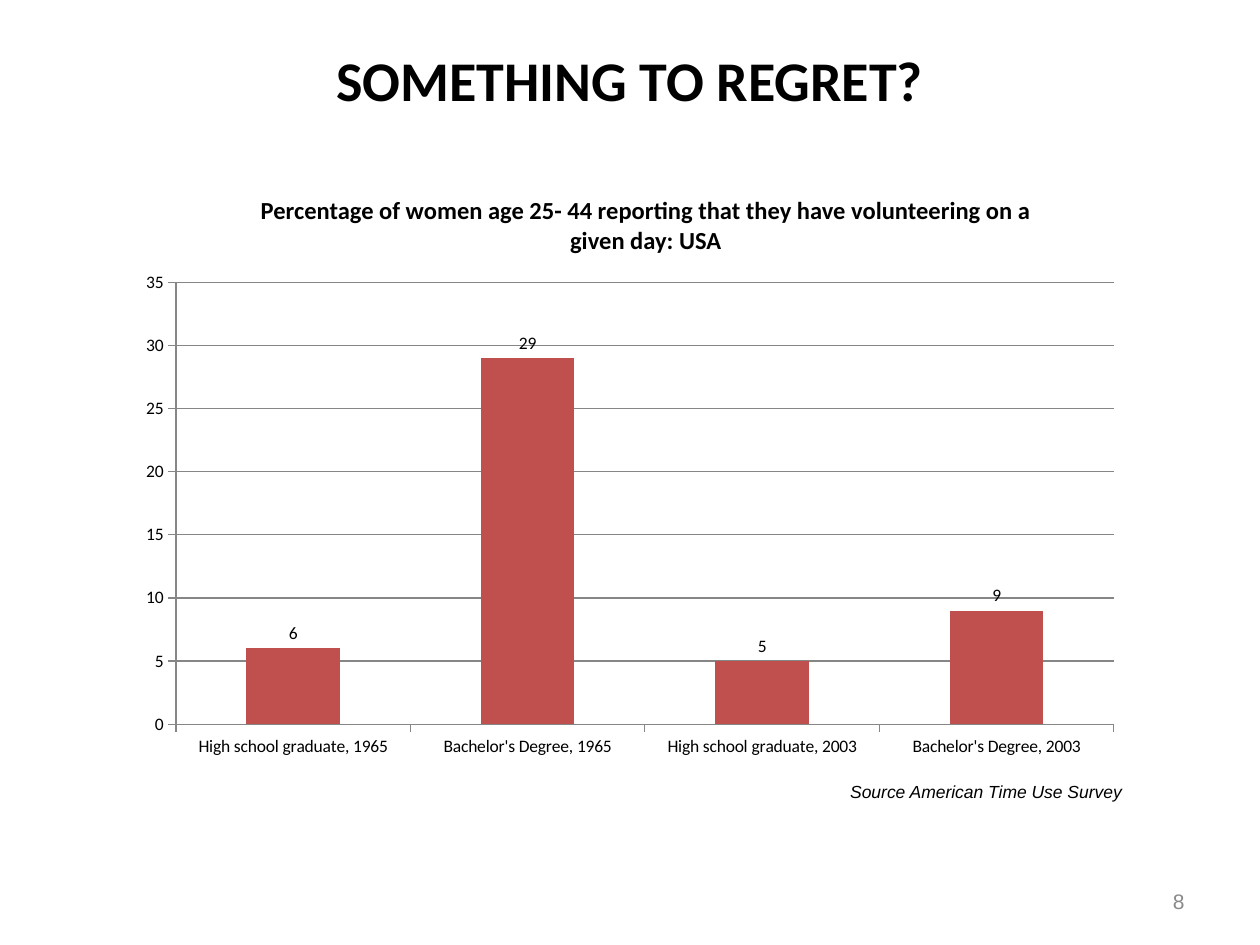
"""Build the slide on volunteering among women in the USA."""
from dataclasses import dataclass

from pptx import Presentation
from pptx import util as u
from pptx.chart.data import CategoryChartData
from pptx.dml.color import RGBColor
from pptx.enum import chart as charts, text

BLACK = RGBColor(0x00, 0x00, 0x00)
GREY = RGBColor(0x89, 0x89, 0x89)
AXIS_GREY = RGBColor(0x86, 0x86, 0x86)
RED = RGBColor(0xC0, 0x50, 0x4D)

VOLUNTEERING = {
    "High school graduate, 1965": 6,
    "Bachelor's Degree, 1965": 29,
    "High school graduate, 2003": 5,
    "Bachelor's Degree, 2003": 9,
}


@dataclass(frozen=True)
class Label:
    words: str
    left: float
    top: float
    width: float
    height: float
    size: float
    font: str
    align: text.PP_ALIGN
    anchor: text.MSO_ANCHOR = text.MSO_ANCHOR.TOP
    color: RGBColor = BLACK
    bold: bool = False
    italic: bool = False


LABELS = (
    Label("8", 516, 500.5, 168, 28.75, 12, "Arial", text.PP_ALIGN.RIGHT,
          text.MSO_ANCHOR.MIDDLE, GREY),
    Label("SOMETHING TO REGRET?", 0, 0, 720, 90, 32, "Calibri",
          text.PP_ALIGN.CENTER, text.MSO_ANCHOR.MIDDLE, bold=True),
    Label("Source American Time Use Survey", 354, 442.5, 294, 19.5, 10,
          "Arial", text.PP_ALIGN.RIGHT, italic=True),
    Label("Percentage of women age 25- 44 reporting that they have "
          "volunteering on a given day: USA", 132, 108, 474, 41, 14,
          "Calibri", text.PP_ALIGN.CENTER, bold=True),
)


def add_label(slide, label: Label) -> None:
    """Draw one text box."""
    box = slide.shapes.add_textbox(u.Pt(label.left), u.Pt(label.top),
                                   u.Pt(label.width), u.Pt(label.height))
    frame = box.text_frame
    frame.word_wrap = True
    frame.vertical_anchor = label.anchor
    para = frame.paragraphs[0]
    para.text = label.words
    para.alignment = label.align
    font = para.font
    font.name, font.size = label.font, u.Pt(label.size)
    font.bold, font.italic = label.bold, label.italic
    font.color.rgb = label.color


def style_line(line) -> None:
    """Give an axis or gridline its thin grey stroke."""
    line.color.rgb = AXIS_GREY
    line.width = u.Pt(0.75)


def add_volunteering_chart(slide) -> None:
    """Draw the column chart of volunteering rates."""
    data = CategoryChartData(number_format="General")
    data.categories = list(VOLUNTEERING)
    data.add_series("Series 1", list(VOLUNTEERING.values()))
    chart = slide.shapes.add_chart(
        charts.XL_CHART_TYPE.COLUMN_CLUSTERED,
        u.Pt(72), u.Pt(150), u.Pt(576), u.Pt(288), data).chart
    chart.has_legend = False
    chart.has_title = False
    chart.font.name, chart.font.size = "Calibri", u.Pt(10)
    chart.font.color.rgb = BLACK

    for axis in (chart.category_axis, chart.value_axis):
        axis.major_tick_mark = charts.XL_TICK_MARK.OUTSIDE
        axis.minor_tick_mark = charts.XL_TICK_MARK.NONE
        style_line(axis.format.line)
    scale = chart.value_axis
    scale.minimum_scale, scale.maximum_scale, scale.major_unit = 0, 35, 5
    scale.has_major_gridlines = True
    style_line(scale.major_gridlines.format.line)

    plot = chart.plots[0]
    plot.gap_width = 150
    plot.vary_by_categories = False
    plot.has_data_labels = True
    plot.data_labels.show_value = True
    plot.data_labels.position = charts.XL_LABEL_POSITION.OUTSIDE_END
    fill = plot.series[0].format.fill
    fill.solid()
    fill.fore_color.rgb = RED


def main() -> None:
    """Build and save the deck."""
    deck = Presentation()
    deck.slide_width, deck.slide_height = u.Pt(720), u.Pt(540)
    slide = deck.slides.add_slide(deck.slide_layouts[6])
    add_volunteering_chart(slide)
    for label in LABELS:
        add_label(slide, label)
    deck.save("out.pptx")


if __name__ == "__main__":
    main()
